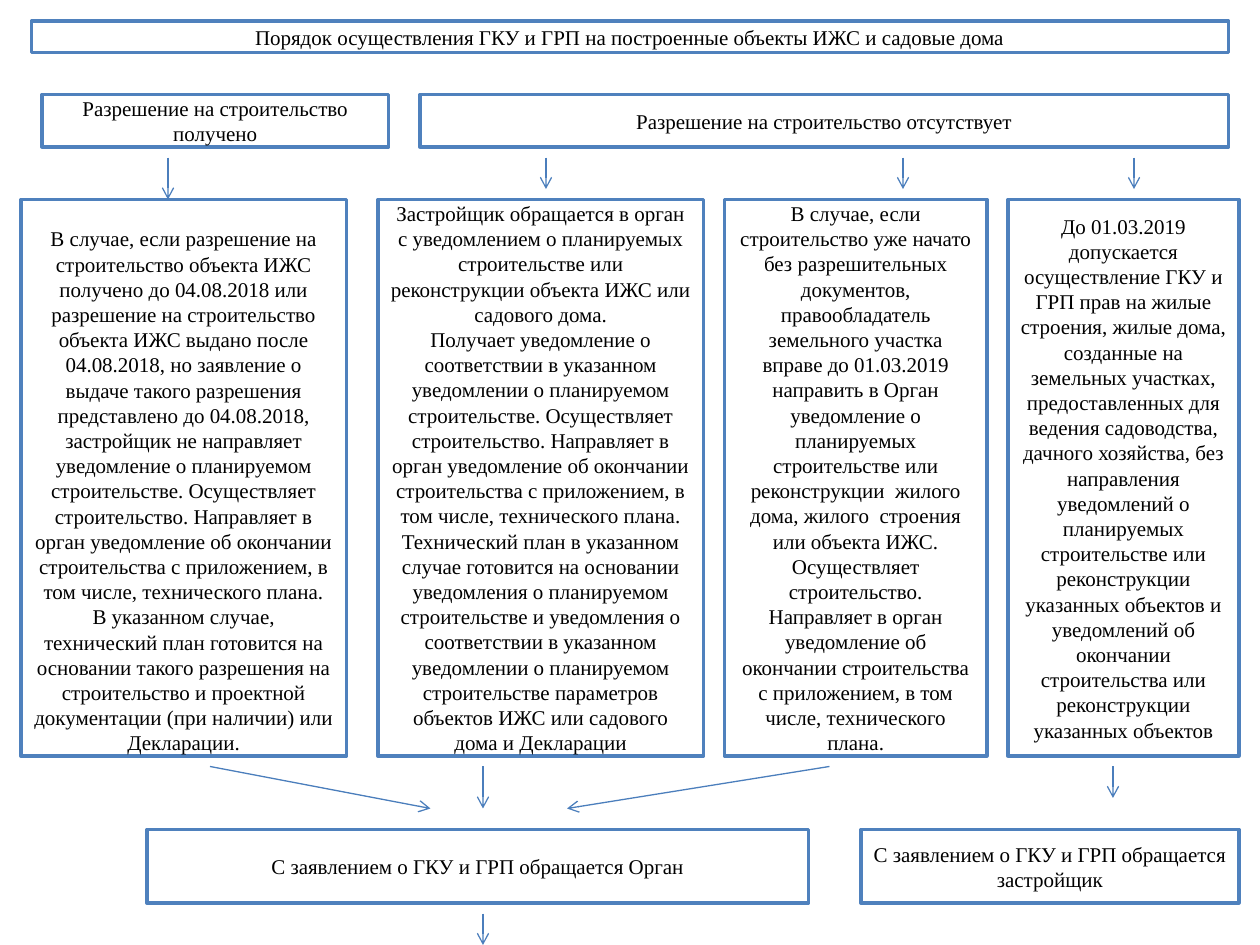
"""Builds the slide on registering newly built houses: permit cases, steps and applicants."""
from dataclasses import dataclass

from lxml.etree import SubElement
from pptx import Presentation
from pptx.dml.color import RGBColor
from pptx.enum.shapes import MSO_CONNECTOR as Connector, MSO_SHAPE as Shape
from pptx.enum.text import MSO_ANCHOR as Anchor, MSO_AUTO_SIZE as AutoSize, PP_ALIGN as Align
from pptx.oxml.ns import qn
from pptx.util import Cm, Pt


@dataclass(frozen=True)
class Theme:
    font: str = "Times New Roman"
    size: Pt = Pt(12)
    text: RGBColor = RGBColor(0, 0, 0)
    fill: RGBColor = RGBColor(255, 255, 255)
    border: RGBColor = RGBColor.from_string("4F81BD")
    border_width: Pt = Pt(2)
    arrow: RGBColor = RGBColor.from_string("4B7EBC")
    arrow_width: Pt = Pt(0.75)


theme = Theme()
SLIDE_WIDTH = 25.4
GRID_COLUMNS = 120


def grid(*steps):
    return [Cm(step * SLIDE_WIDTH / GRID_COLUMNS) for step in steps]


def fill_box(box, text):
    box.fill.solid()
    box.fill.fore_color.rgb = theme.fill
    box.line.color.rgb = theme.border
    box.line.width = theme.border_width
    frame = box.text_frame
    frame.text = text
    frame.word_wrap = True
    frame.auto_size = AutoSize.NONE
    frame.vertical_anchor = Anchor.MIDDLE
    for paragraph in frame.paragraphs:
        paragraph.alignment = Align.CENTER
        for run in paragraph.runs:
            run.font.name = theme.font
            run.font.size = theme.size
            run.font.color.rgb = theme.text


deck = Presentation()
deck.slide_width, deck.slide_height = Cm(SLIDE_WIDTH), Cm(19.05)
slide = deck.slides.add_slide(deck.slide_layouts[5])

heading = slide.shapes.title
heading.left, heading.top, heading.width, heading.height = grid(3, 2, 114, 3)
fill_box(heading, "Порядок осуществления ГКУ и ГРП на построенные объекты ИЖС и садовые дома")

permit_granted_steps = (
    "В случае, если разрешение на строительство объекта ИЖС получено до 04.08.2018 или "
    "разрешение на строительство объекта ИЖС выдано после 04.08.2018, но заявление о выдаче "
    "такого разрешения представлено до 04.08.2018, застройщик не направляет уведомление о "
    "планируемом строительстве. Осуществляет строительство. Направляет в орган уведомление "
    "об окончании строительства с приложением, в том числе, технического плана.\n"
    "В указанном случае, технический план готовится на основании такого разрешения на "
    "строительство и проектной документации (при наличии) или Декларации."
)
new_building_steps = (
    "Застройщик обращается в орган с уведомлением о планируемых строительстве или "
    "реконструкции объекта ИЖС или садового дома.\n"
    "Получает уведомление о соответствии в указанном уведомлении о планируемом "
    "строительстве. Осуществляет строительство. Направляет в орган уведомление об окончании "
    "строительства с приложением, в том числе, технического плана. Технический план в "
    "указанном случае готовится на основании уведомления о планируемом строительстве и "
    "уведомления о соответствии в указанном уведомлении о планируемом строительстве "
    "параметров объектов ИЖС или садового дома и Декларации"
)
started_building_steps = (
    "В случае, если строительство уже начато без разрешительных документов, правообладатель "
    "земельного участка вправе до 01.03.2019 направить в Орган уведомление о планируемых "
    "строительстве или реконструкции  жилого дома, жилого  строения или объекта ИЖС. "
    "Осуществляет строительство. Направляет в орган уведомление об окончании строительства "
    "с приложением, в том числе, технического плана."
)
garden_plot_steps = (
    "До 01.03.2019 допускается осуществление ГКУ и ГРП прав на жилые строения, жилые дома, "
    "созданные на земельных участках, предоставленных для ведения садоводства, дачного "
    "хозяйства, без направления уведомлений о планируемых строительстве или реконструкции "
    "указанных объектов и уведомлений об окончании строительства или реконструкции "
    "указанных объектов"
)

permits = [
    (4, 33, "Разрешение на строительство получено"),
    (40, 77, "Разрешение на строительство отсутствует"),
]
procedures = [
    (2, 31, permit_granted_steps),
    (36, 31, new_building_steps),
    (69, 25, started_building_steps),
    (96, 22, garden_plot_steps),
]
applicants = [
    (14, 63, "С заявлением о ГКУ и ГРП обращается Орган"),
    (82, 36, "С заявлением о ГКУ и ГРП обращается застройщик"),
]

for top, height, row in [(9, 5, permits), (19, 53, procedures), (79, 7, applicants)]:
    for left, width, text in row:
        step = slide.shapes.add_shape(Shape.RECTANGLE, *grid(left, top, width, height))
        step.shadow.inherit = False
        fill_box(step, text)
        if text == permit_granted_steps:
            step.text_frame.margin_top = Cm(0.64)

flows = [
    (16, 15, 16, 19),
    (52, 15, 52, 18),
    (86, 15, 86, 18),
    (108, 15, 108, 18),
    (20, 73, 41, 77),
    (46, 73, 46, 77),
    (79, 73, 54, 77),
    (106, 73, 106, 76),
    (46, 87, 46, 90),
]
for ends in flows:
    flow = slide.shapes.add_connector(Connector.STRAIGHT, *grid(*ends))
    flow.line.color.rgb = theme.arrow
    flow.line.width = theme.arrow_width
    SubElement(flow.line._get_or_add_ln(), qn("a:tailEnd"), type="arrow")
    SubElement(flow._element.spPr, qn("a:effectLst"))

deck.save("out.pptx")
